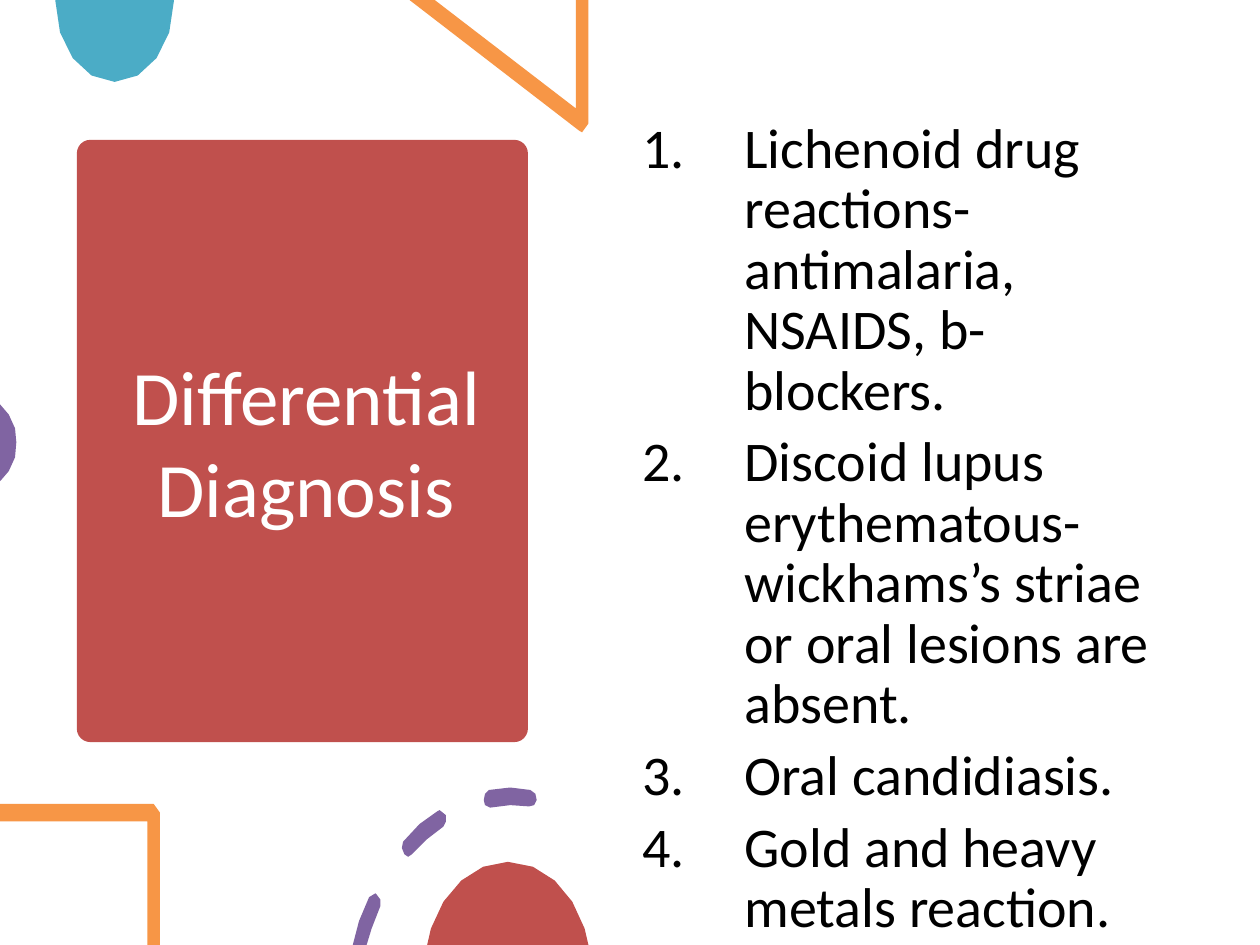
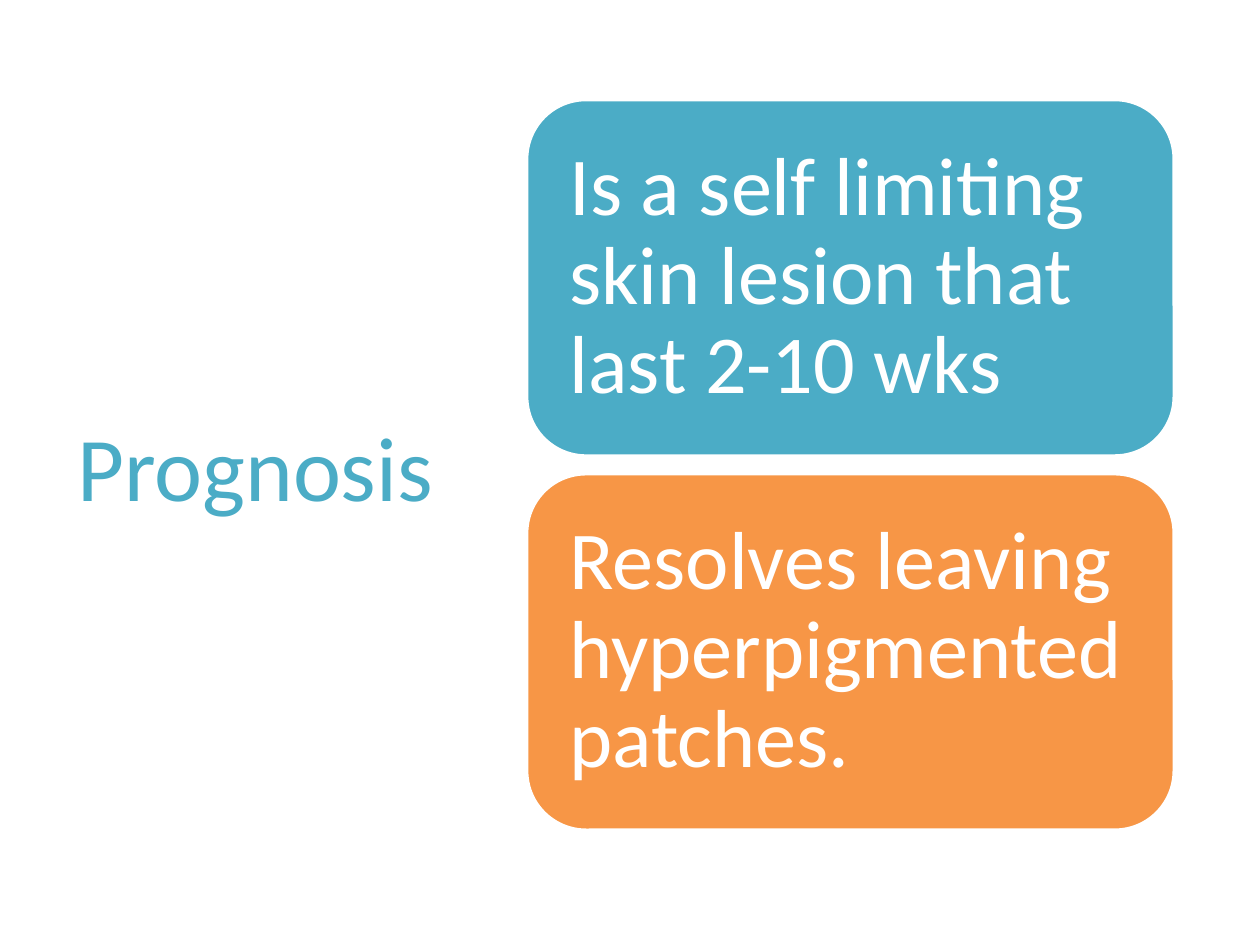
"""Build two slides on a skin lesion: its differential diagnosis and its prognosis."""
from math import dist
from lxml.etree import SubElement
from pptx import Presentation
from pptx.dml.color import RGBColor
from pptx.enum.shapes import MSO_SHAPE
from pptx.enum.text import MSO_ANCHOR, PP_ALIGN
from pptx.oxml.ns import qn
from pptx.util import Inches, Pt

COLORS = {"red": "C0504D", "teal": "4BACC6", "orange": "F79646",
          "purple": "8064A2", "white": "FFFFFF", "black": "000000"}
FONT = "Calibri"

deck = Presentation()
deck.slide_width, deck.slide_height = Inches(10), Inches(7.5)
COL = deck.slide_width / 100
ROW = deck.slide_height / 75


def outline(page, color, *contours):
    """Draw closed contours; a pair is a line's end, six numbers are a Bezier curve."""
    builder = None
    for start, *steps in contours:
        points = [start]
        for step in steps:
            if len(step) == 2:
                points.append(step)
                continue
            knots = [points[-1], step[:2], step[2:4], step[4:]]
            pieces = 4 if dist(knots[0], knots[3]) > 4 else 1
            for index in range(1, pieces + 1):
                t = index / pieces
                weights = ((1 - t) ** 3, 3 * t * (1 - t) ** 2, 3 * t * t * (1 - t), t ** 3)
                points.append(tuple(sum(weight * knot[axis] for weight, knot in zip(weights, knots))
                                    for axis in (0, 1)))
        points = [(x * COL, y * ROW) for x, y in points]
        if builder is None:
            builder = page.shapes.build_freeform(*points[0], scale=1.0)
        else:
            builder.move_to(*points[0])
        builder.add_line_segments(points[1:], close=True)
    shape = builder.convert_to_shape()
    shape.shadow.inherit = False
    shape.fill.solid()
    shape.fill.fore_color.rgb = RGBColor.from_string(COLORS[color])
    shape.line.fill.background()


def write(box, lines, size, color, align=PP_ALIGN.LEFT, anchor=MSO_ANCHOR.MIDDLE, spacing=1.0):
    """Fill a box with one paragraph per line and return the paragraphs."""
    frame = box.text_frame
    frame.word_wrap = True
    frame.vertical_anchor = anchor
    for index, line in enumerate(lines):
        para = frame.add_paragraph() if index else frame.paragraphs[0]
        para.alignment = align
        para.line_spacing = spacing
        span = para.add_run()
        span.text = line
        span.font.name = FONT
        span.font.size = Pt(size)
        span.font.color.rgb = RGBColor.from_string(COLORS[color])
    return frame.paragraphs


diagnosis, prognosis = [deck.slides.add_slide(deck.slide_layouts[6]) for _ in range(2)]

panel = diagnosis.shapes.add_shape(
    MSO_SHAPE.ROUNDED_RECTANGLE, 6.1 * COL, 11.1 * ROW, 35.8 * COL, 47.8 * ROW)
panel.adjustments[0] = 0.03
panel.shadow.inherit = False
panel.fill.solid()
panel.fill.fore_color.rgb = RGBColor.from_string(COLORS["red"])
panel.line.fill.background()

for page, title, size, color, left, top, width, height in (
        (diagnosis, "Differential Diagnosis", 44, "white", 7.8, 12.2, 32.3, 45.6),
        (prognosis, "Prognosis", 52, "teal", 4.3, 6.8, 31.2, 60.2)):
    box = page.shapes.add_textbox(left * COL, top * ROW, width * COL, height * ROW)
    para = write(box, [title], size, color, PP_ALIGN.CENTER)[0]
    para._p.get_or_add_pPr().set("marL", str(Inches(0.07)))

outline(diagnosis, "teal", [
    (13.8, 0), (4.4, 0), (4.4, 0.1), (4.4, 3.6, 6.5, 6.5, 9.1, 6.5), (11.7, 6.5, 13.8, 3.6, 13.8, 0.1)])
outline(diagnosis, "orange", [
    (46.7, 0), (45.7, 0), (45.7, 8.6), (34.5, 0), (32.5, 0), (46, 10.4), (46.2, 10.5),
    (46.5, 10.5, 46.7, 10.2, 46.7, 9.8)])
outline(diagnosis, "purple", [
    (0, 32.1), (0, 38.2), (0.1, 38.1), (0.7, 37.4), (1.2, 36.3), (1.3, 35.1), (1.2, 34), (0.7, 32.9),
    (0.1, 32.2)])

causes = diagnosis.shapes.add_textbox(50 * COL, 9 * ROW, 43.1 * COL, 53.5 * ROW)
for para in write(causes, [
        "Lichenoid drug reactions-antimalaria, NSAIDS, b-blockers.",
        "Discoid lupus erythematous-wickhams’s striae or oral lesions are absent.",
        "Oral candidiasis.",
        "Gold and heavy metals reaction."], 32, "black", anchor=MSO_ANCHOR.TOP, spacing=0.9):
    para.space_before = Pt(6.4)
    properties = para._p.get_or_add_pPr()
    properties.set("marL", str(Inches(0.81)))
    properties.set("indent", str(-Inches(0.81)))
    SubElement(properties, qn("a:buFont"), typeface=FONT)
    SubElement(properties, qn("a:buAutoNum"), type="arabicPeriod")

outline(diagnosis, "orange", [
    (12.2, 63.8), (0, 63.8), (0, 65.2), (11.7, 65.2), (11.7, 75), (12.7, 75), (12.7, 64.5),
    (12.7, 64.1, 12.5, 63.8, 12.2, 63.8)])
outline(
    diagnosis, "purple",
    [(29.8, 70.9), (29.3, 71.2), (28.5, 73.1), (28, 75), (29.1, 75), (29.5, 73.7), (30.2, 71.9),
     (30.2, 71.4), (29.9, 71)],
    [(34.9, 64.3), (34.7, 64.4), (33.3, 65.4), (32, 66.8), (31.9, 67.3), (32.1, 67.8), (32.4, 68),
     (32.7, 67.8), (33.9, 66.6), (35.2, 65.6), (35.4, 65.2), (35.4, 64.7)],
    [(40.5, 62.5), (38.8, 62.7), (38.5, 63), (38.4, 63.5), (38.5, 63.9), (38.9, 64.1),
     (40.5, 63.9), (42, 64), (42.4, 63.9), (42.6, 63.5), (42.5, 63), (42.1, 62.7)])
outline(diagnosis, "red", [
    (40.3, 68.4), (37.6, 68.4, 35.2, 70.6, 34.2, 73.7), (33.9, 75), (46.7, 75), (46.4, 73.7),
    (45.4, 70.6, 43.1, 68.4, 40.3, 68.4)])

for row, (outcome, color) in enumerate((
        ("Is a self limiting skin lesion that last 2-10 wks", "teal"),
        ("Resolves leaving hyperpigmented patches.", "orange"))):
    top = 7.9 + 29.7 * row
    card = prognosis.shapes.add_shape(
        MSO_SHAPE.ROUNDED_RECTANGLE, 41.8 * COL, top * ROW, 51.4 * COL, 28.3 * ROW)
    card.shadow.inherit = False
    card.fill.solid()
    card.fill.fore_color.rgb = RGBColor.from_string(COLORS[color])
    card.line.color.rgb = RGBColor.from_string(COLORS["white"])
    card.line.width = Pt(2)
    label = prognosis.shapes.add_textbox(43.2 * COL, (top + 1.4) * ROW, 48.6 * COL, 25.5 * ROW)
    frame = label.text_frame
    frame.margin_left = frame.margin_right = frame.margin_top = frame.margin_bottom = Inches(0.2)
    write(label, [outcome], 47, "white", spacing=0.9)

deck.save("out.pptx")
